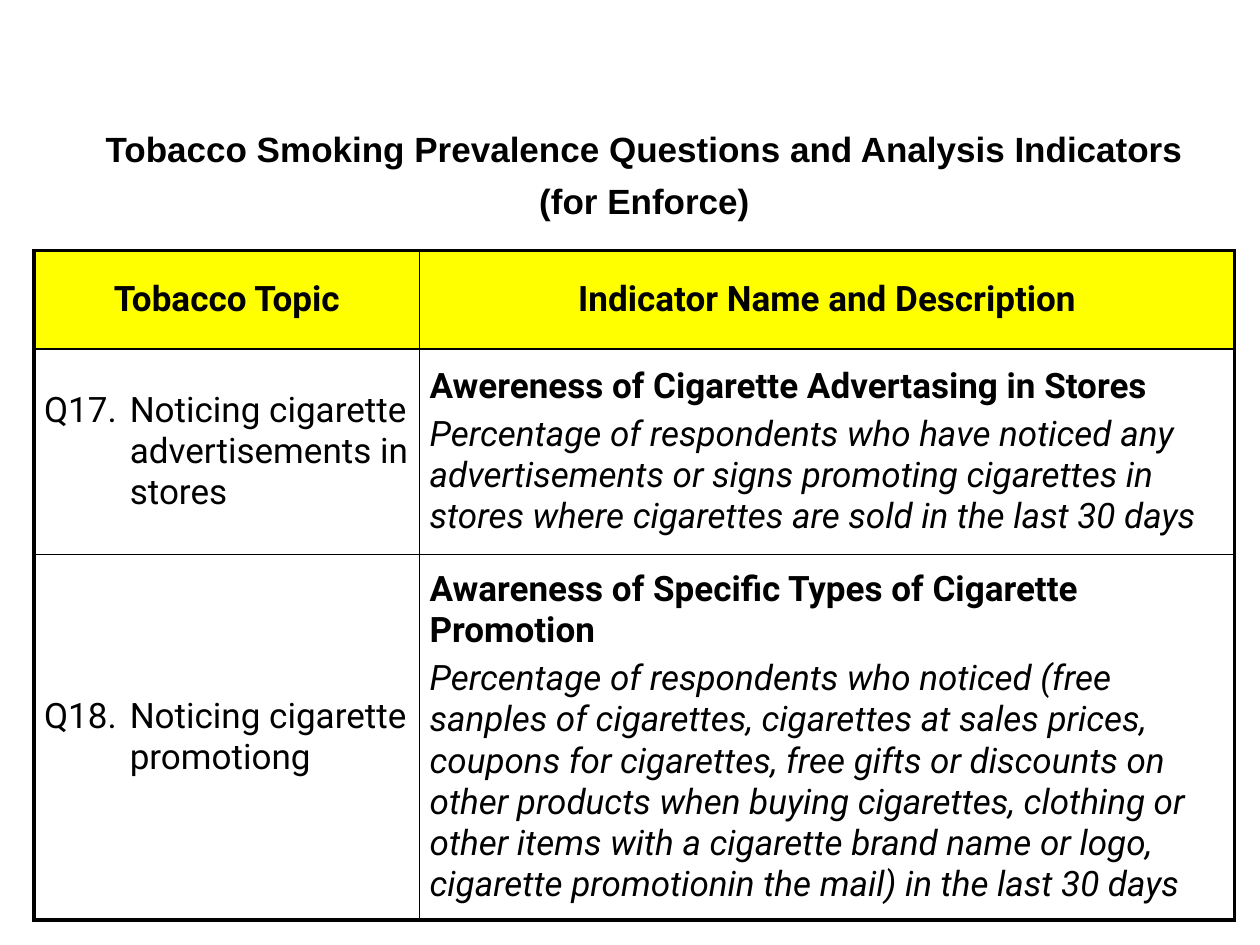
from dataclasses import dataclass
from typing import Any

from lxml import etree
from pptx import Presentation
from pptx import util as u
from pptx.dml.color import RGBColor
from pptx.enum import text
from pptx.oxml.ns import qn

COLORS = {"ink": "000000", "header": "FFFF00"}
TITLE = ["Tobacco Smoking Prevalence Questions and Analysis Indicators", "(for Enforce)"]
HEADERS = ["Tobacco Topic", "Indicator Name and Description"]
INDICATORS = [
    (
        "Q17.\tNoticing cigarette advertisements in stores",
        "Awereness of Cigarette Advertasing in Stores",
        "Percentage of respondents who have noticed any advertisements or signs "
        "promoting cigarettes in stores where cigarettes are sold in the last 30 days",
    ),
    (
        "Q18.\tNoticing cigarette promotiong",
        "Awareness of Specific Types of Cigarette Promotion",
        "Percentage of respondents who noticed (free sanples of cigarettes, cigarettes "
        "at sales prices, coupons for cigarettes, free gifts or discounts on other "
        "products when buying cigarettes, clothing or other items with a cigarette "
        "brand name or logo, cigarette promotionin the mail) in the last 30 days",
    ),
]
COLUMN_WIDTHS = [3.06, 6.47]
ROW_HEIGHTS = [0.78, 1.63, 2.9]


@dataclass
class SlideBuilder:
    slide: Any
    title_font: str = "Arial"
    table_font: str = "Roboto"
    size: float = 20
    outer_line: float = 2.25
    inner_line: float = 1

    def add_lines(self, frame, lines, font, align, gap):
        for index, (words, bold, italic) in enumerate(lines):
            paragraph = frame.paragraphs[0] if index == 0 else frame.add_paragraph()
            paragraph.alignment = align
            paragraph.space_before = u.Pt(gap if index else 0)
            run = paragraph.add_run()
            run.text = words
            run.font.name = font
            run.font.size = u.Pt(self.size)
            run.font.bold = bold
            run.font.italic = italic
            run.font.color.rgb = RGBColor.from_string(COLORS["ink"])

    def title(self, lines, left, top, width, height):
        shape = self.slide.shapes.title
        shape.left, shape.top = u.Inches(left), u.Inches(top)
        shape.width, shape.height = u.Inches(width), u.Inches(height)
        frame = shape.text_frame
        frame.word_wrap = True
        frame.auto_size = text.MSO_AUTO_SIZE.SHAPE_TO_FIT_TEXT
        frame.vertical_anchor = text.MSO_ANCHOR.MIDDLE
        frame.margin_left = frame.margin_right = u.Inches(0.02)
        frame.margin_top = frame.margin_bottom = u.Inches(0.01)
        styled = [(line, True, False) for line in lines]
        self.add_lines(frame, styled, self.title_font, text.PP_ALIGN.CENTER, 5.5)

    def table(self, left, top, widths, heights):
        frame = self.slide.shapes.add_table(
            len(heights), len(widths), u.Inches(left), u.Inches(top),
            u.Inches(sum(widths)), u.Inches(sum(heights)),
        )
        table = frame.table
        table.first_row = table.horz_banding = False
        for column, width in zip(table.columns, widths):
            column.width = u.Inches(width)
        for row, height in zip(table.rows, heights):
            row.height = u.Inches(height)
        return table

    def cell(self, table, row, column, lines, align=text.PP_ALIGN.LEFT, fill=None):
        cell = table.cell(row, column)
        cell.vertical_anchor = text.MSO_ANCHOR.MIDDLE
        cell.margin_left = cell.margin_right = u.Inches(0.08)
        cell.margin_top = cell.margin_bottom = u.Inches(0.02)
        self.borders(
            cell,
            lnL=column == 0,
            lnR=column == len(table.columns) - 1,
            lnT=row == 0,
            lnB=row == len(table.rows) - 1,
        )
        if fill:
            cell.fill.solid()
            cell.fill.fore_color.rgb = RGBColor.from_string(COLORS[fill])
        else:
            cell.fill.background()
        self.add_lines(cell.text_frame, lines, self.table_font, align, 4)
        return cell

    def borders(self, cell, **edges):
        properties = cell._tc.get_or_add_tcPr()
        for side, is_outer in edges.items():
            width = u.Pt(self.outer_line if is_outer else self.inner_line)
            line = etree.SubElement(properties, qn(f"a:{side}"), w=str(int(width)))
            fill = etree.SubElement(line, qn("a:solidFill"))
            etree.SubElement(fill, qn("a:srgbClr"), val=COLORS["ink"])

    def hanging_indent(self, cell, indent, tab):
        properties = cell.text_frame.paragraphs[0]._p.get_or_add_pPr()
        properties.set("marL", str(int(u.Inches(indent))))
        properties.set("indent", str(-int(u.Inches(indent))))
        tabs = etree.SubElement(properties, qn("a:tabLst"))
        etree.SubElement(tabs, qn("a:tab"), pos=str(int(u.Inches(tab))), algn="l")


def main():
    presentation = Presentation()
    presentation.slide_width = u.Inches(10)
    presentation.slide_height = u.Inches(7.5)
    builder = SlideBuilder(presentation.slides.add_slide(presentation.slide_layouts[5]))

    builder.title(TITLE, 0.51, 1, 9.21, 0.77)
    table = builder.table(0.27, 1.99, COLUMN_WIDTHS, ROW_HEIGHTS)
    for column, header in enumerate(HEADERS):
        builder.cell(
            table, 0, column, [(header, True, False)], text.PP_ALIGN.CENTER, "header"
        )
    for row, (topic, name, description) in enumerate(INDICATORS, start=1):
        topic_cell = builder.cell(table, row, 0, [(topic, False, False)])
        builder.hanging_indent(topic_cell, 0.68, 0.49)
        builder.cell(table, row, 1, [(name, True, False), (description, False, True)])

    presentation.save("out.pptx")


if __name__ == "__main__":
    main()
